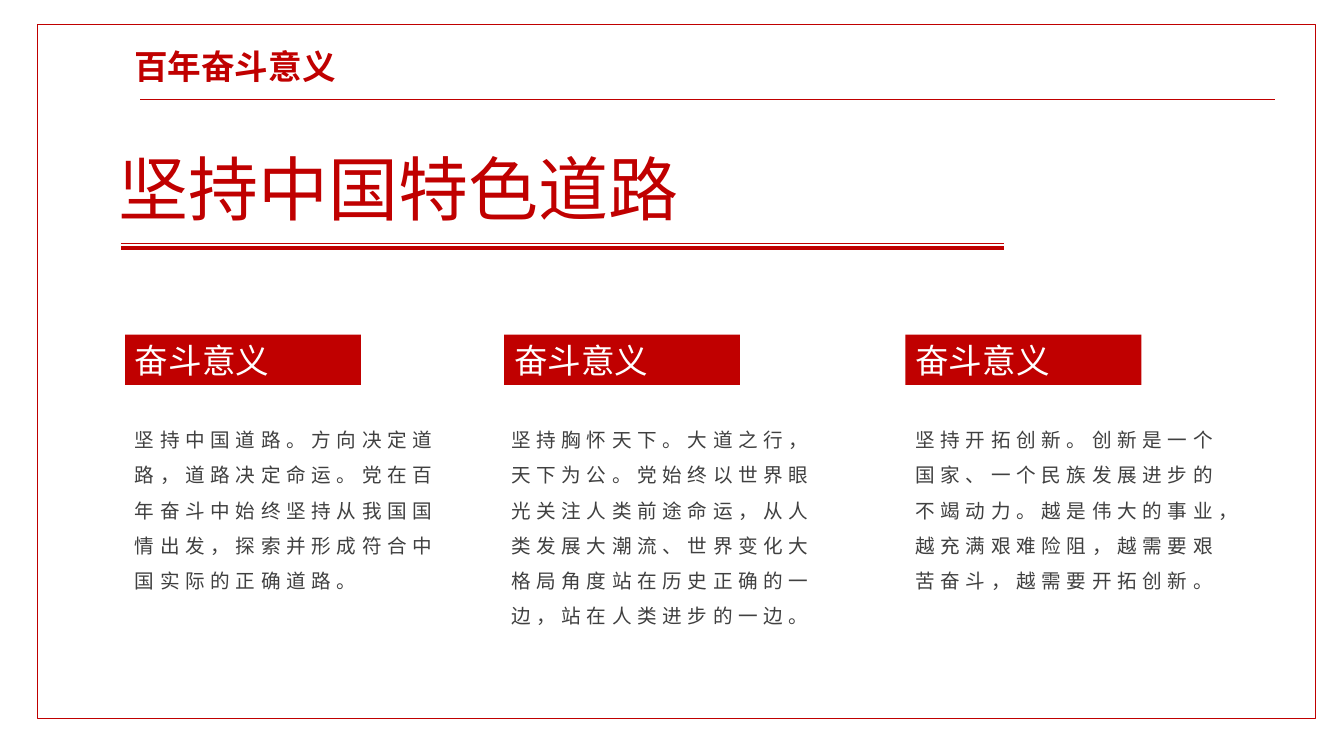
"""Build the slide on the meaning of a century of struggle."""
import pptx
import pptx.dml.color
import pptx.enum.shapes
import pptx.enum.text
import pptx.oxml.ns
import pptx.util
from lxml import etree
from pptx.util import Inches

COLORS = {"red": "C00000", "white": "FFFFFF", "gray": "404040"}
FONT = "Noto Sans CJK SC"
JUSTIFY = pptx.enum.text.PP_ALIGN.JUSTIFY
LEFT = pptx.enum.text.PP_ALIGN.LEFT
COLUMNS = [
    (1.24, 1.24, 1.82, "坚持中国道路。方向决定道路，道路决定命运。党在百年奋斗中始终坚持从我国国情出发，探索并形成符合中国实际的正确道路。"),
    (5, 4.97, 2.17, "坚持胸怀天下。大道之行，天下为公。党始终以世界眼光关注人类前途命运，从人类发展大潮流、世界变化大格局角度站在历史正确的一边，站在人类进步的一边。"),
    (8.98, 8.98, 1.82, "坚持开拓创新。创新是一个国家、一个民族发展进步的不竭动力。越是伟大的事业，越充满艰难险阻，越需要艰苦奋斗，越需要开拓创新。"),
]


def rgb(name):
    return pptx.dml.color.RGBColor.from_string(COLORS[name])


def write(shape, text, size, color, bold=False, align=JUSTIFY, line_spacing=1.0, tracking=0):
    frame = shape.text_frame
    frame_format = {
        "word_wrap": True,
        "auto_size": pptx.enum.text.MSO_AUTO_SIZE.SHAPE_TO_FIT_TEXT,
        "vertical_anchor": pptx.enum.text.MSO_ANCHOR.TOP,
    }
    for name, value in frame_format.items():
        setattr(frame, name, value)
    paragraph = frame.paragraphs[0]
    paragraph.alignment = align
    paragraph.line_spacing = line_spacing
    run = paragraph.add_run()
    run.text = text
    for name, value in {"size": pptx.util.Pt(size), "bold": bold, "name": FONT}.items():
        setattr(run.font, name, value)
    run.font.color.rgb = rgb(color)
    properties = run._r.get_or_add_rPr()
    etree.SubElement(properties, pptx.oxml.ns.qn("a:ea"), typeface=FONT)
    if tracking:
        properties.set("spc", str(tracking * 100))


def add_text(slide, box, text, size, color, **text_format):
    textbox = slide.shapes.add_textbox(*map(Inches, box))
    write(textbox, text, size, color, **text_format)


def add_rectangle(slide, box):
    rectangle = slide.shapes.add_shape(
        pptx.enum.shapes.MSO_SHAPE.RECTANGLE, *map(Inches, box))
    rectangle.shadow.inherit = False
    return rectangle


def add_frame(slide, box):
    frame = add_rectangle(slide, box)
    frame.fill.background()
    frame.line.color.rgb = rgb("red")
    frame.line.width = pptx.util.Pt(1)


def add_label(slide, box, text):
    label = add_rectangle(slide, box)
    label.fill.solid()
    label.fill.fore_color.rgb = rgb("red")
    label.line.fill.background()
    write(label, text, 24, "white")


def add_rule(slide, left, right, y, width):
    rule = slide.shapes.add_connector(
        pptx.enum.shapes.MSO_CONNECTOR.STRAIGHT,
        Inches(left), Inches(y), Inches(right), Inches(y))
    rule.line.color.rgb = rgb("red")
    rule.line.width = pptx.util.Pt(width)
    etree.SubElement(rule._element.spPr, pptx.oxml.ns.qn("a:effectLst"))


def place_title(slide, box, text):
    title = slide.shapes.title
    for name, value in zip(("left", "top", "width", "height"), box):
        setattr(title, name, Inches(value))
    write(title, text, 24, "red", bold=True)


def main():
    presentation = pptx.Presentation()
    presentation.slide_width = Inches(13.33)
    presentation.slide_height = Inches(7.5)
    slide = presentation.slides.add_slide(presentation.slide_layouts[5])

    place_title(slide, (1.23, 0.41, 2.52, 0.5), "百年奋斗意义")
    add_frame(slide, (0.37, 0.24, 12.68, 6.89))
    add_rule(slide, 1.39, 12.65, 0.99, 0.5)
    add_text(slide, (1.08, 1.39, 8.37, 0.94), "坚持中国特色道路", 50, "red")
    for y, width in ((2.41, 0.5), (2.46, 3)):
        add_rule(slide, 1.2, 9.96, y, width)
    for label_left, body_left, body_height, body in COLUMNS:
        add_label(slide, (label_left, 3.32, 2.34, 0.5), "奋斗意义")
        add_text(slide, (body_left, 4.08, 3.21, body_height), body, 14, "gray",
                 align=LEFT, line_spacing=1.5, tracking=4)

    presentation.save("out.pptx")


if __name__ == "__main__":
    main()
